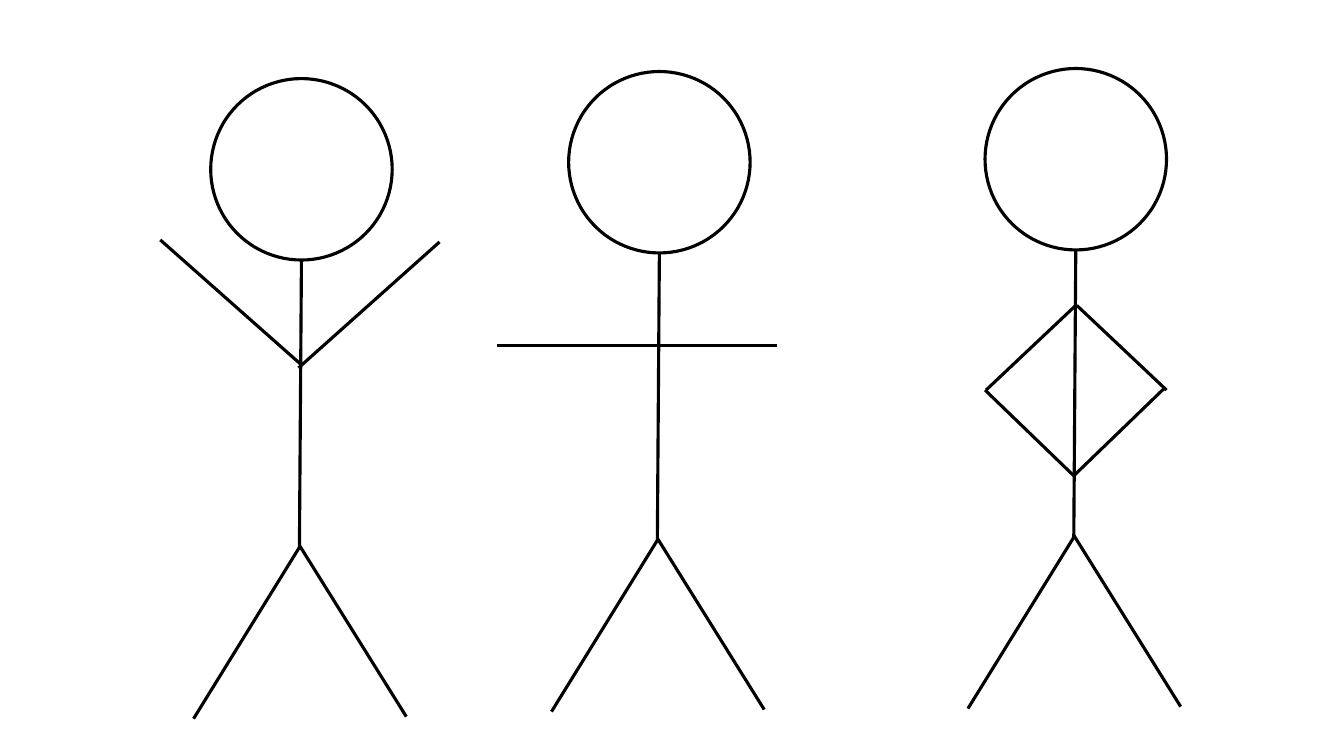
from dataclasses import dataclass

from lxml.etree import SubElement
from pptx import Presentation
from pptx.dml.color import RGBColor
from pptx.enum.shapes import MSO_CONNECTOR, MSO_SHAPE
from pptx.oxml.ns import qn
from pptx.shapes.shapetree import GroupShapes, SlideShapes
from pptx.util import Emu, Inches, Pt

EMU_PER_PX = Inches(1) // 100  # 100 px to the inch


@dataclass(frozen=True)
class Theme:
    ink: RGBColor = RGBColor(0, 0, 0)
    stroke: Pt = Pt(2.25)


@dataclass(frozen=True)
class Segment:
    x1: int
    y1: int
    x2: int
    y2: int


@dataclass(frozen=True)
class Figure:
    left: int
    top: int
    arms: tuple[Segment, ...]


THEME = Theme()
HEAD_SIZE = 180

# Trunk and legs, measured from the top left corner of the head
BODY = (
    Segment(90, 180, 88, 465),
    Segment(88, 465, -17, 635),
    Segment(88, 463, 194, 633),
)

# Arms, measured from the top left corner of the slide
FIGURES = (
    Figure(564, 71, arms=(Segment(493, 343, 771, 343),)),
    Figure(209, 78, arms=(
        Segment(159, 238, 299, 362),
        Segment(436, 240, 296, 365),
    )),
    Figure(977, 68, arms=(
        Segment(977, 387, 1065, 472),
        Segment(1154, 386, 1066, 471),
        Segment(1067, 303, 978, 387),
        Segment(1068, 303, 1157, 387),
    )),
)


def px(length: int) -> Emu:
    return Emu(length * EMU_PER_PX)


def draw_segment(shapes: SlideShapes | GroupShapes, segment: Segment,
                 left: int = 0, top: int = 0) -> None:
    connector = shapes.add_connector(
        MSO_CONNECTOR.STRAIGHT,
        px(left + segment.x1), px(top + segment.y1),
        px(left + segment.x2), px(top + segment.y2),
    )
    connector.line.color.rgb = THEME.ink
    connector.line.width = THEME.stroke
    SubElement(connector._element.spPr, qn("a:effectLst"))


def draw_body(shapes: SlideShapes, figure: Figure) -> None:
    group = shapes.add_group_shape()
    head = group.shapes.add_shape(
        MSO_SHAPE.OVAL, px(figure.left), px(figure.top), px(HEAD_SIZE), px(HEAD_SIZE)
    )
    head.shadow.inherit = False
    head.fill.background()
    head.line.color.rgb = THEME.ink
    head.line.width = THEME.stroke
    for segment in BODY:
        draw_segment(group.shapes, segment, figure.left, figure.top)


def main() -> None:
    presentation = Presentation()
    presentation.slide_width = px(1333)
    presentation.slide_height = px(750)
    slide = presentation.slides.add_slide(presentation.slide_layouts[6])

    # Heads, trunks and legs
    for figure in FIGURES:
        draw_body(slide.shapes, figure)

    # Arms
    for figure in FIGURES:
        for arm in figure.arms:
            draw_segment(slide.shapes, arm)

    presentation.save("out.pptx")


if __name__ == "__main__":
    main()
